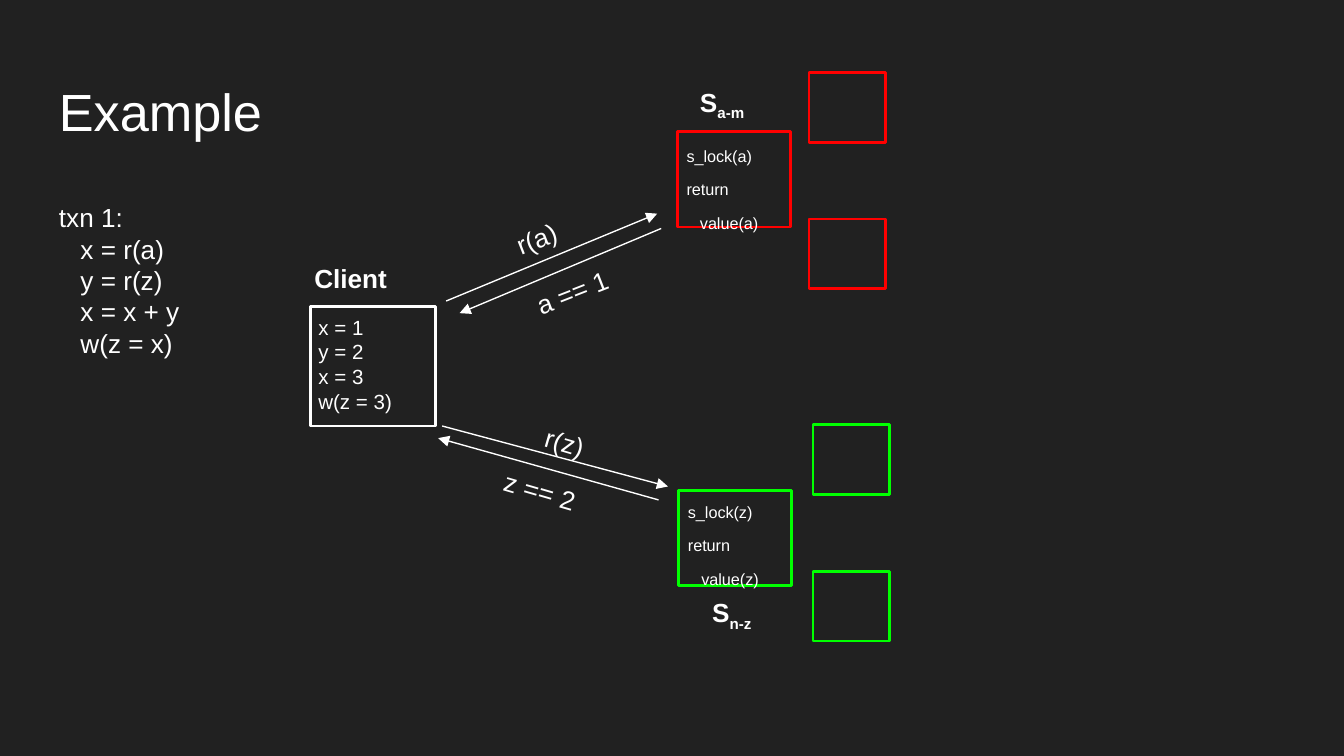
from pptx import Presentation
from pptx.dml.color import RGBColor
from pptx.enum.shapes import MSO_CONNECTOR, MSO_SHAPE
from pptx.oxml.ns import qn
from pptx.util import Inches, Pt
from lxml import etree

RECTANGLE = MSO_SHAPE.RECTANGLE
STRAIGHT = MSO_CONNECTOR.STRAIGHT
BACKGROUND, WHITE, RED, GREEN = "212121", "FFFFFF", "FF0000", "00FF00"


def color(value):
    return RGBColor.from_string(value)


class SlideBuilder:
    font = "Arial"
    margin = 0.1

    def __init__(self, slide):
        self.slide = slide
        slide.background.fill.solid()
        slide.background.fill.fore_color.rgb = color(BACKGROUND)

    def run(self, paragraph, text, size, bold, baseline):
        run = paragraph.add_run()
        run.text = text
        run.font.name = self.font
        run.font.size = Pt(size)
        run.font.bold = bold
        run.font.color.rgb = color(WHITE)
        if baseline:
            run.font._element.set("baseline", str(baseline * 1000))

    def text(self, text, left, top, width, height, size=14, bold=False,
             rotation=0, baseline=0, subscript="", indents=()):
        """Newlines split paragraphs, vertical tabs break lines within one."""
        box = self.slide.shapes.add_textbox(
            Inches(left), Inches(top), Inches(width), Inches(height))
        box.rotation = rotation
        frame = box.text_frame
        frame.word_wrap = True
        frame.margin_left = frame.margin_right = Inches(self.margin)
        frame.margin_top = frame.margin_bottom = Inches(self.margin)
        for index, content in enumerate(text.split("\n")):
            paragraph = frame.add_paragraph() if index else frame.paragraphs[0]
            if indents:
                properties = paragraph._p.get_or_add_pPr()
                properties.set("marL", str(Inches(indents[index])))
                properties.set("indent", "0")
            for line_index, line in enumerate(content.split("\v")):
                if line_index:
                    paragraph.add_line_break()
                self.run(paragraph, line, size, bold, baseline)
        if subscript:
            self.run(paragraph, subscript, size, bold, -25)

    def outline(self, left, top, width, height, line_color):
        shape = self.slide.shapes.add_shape(
            RECTANGLE, Inches(left), Inches(top), Inches(width), Inches(height))
        shape.shadow.inherit = False
        shape.fill.background()
        shape.line.color.rgb = color(line_color)
        shape.line.width = Pt(1.5)

    def arrow(self, start, end):
        connector = self.slide.shapes.add_connector(
            STRAIGHT, *(Inches(value) for value in start + end))
        connector.line.color.rgb = color(WHITE)
        connector.line.width = Pt(0.75)
        line = connector.line._get_or_add_ln()
        etree.SubElement(line, qn("a:tailEnd"), type="triangle")
        etree.SubElement(connector._element.spPr, qn("a:effectLst"))


def main():
    presentation = Presentation()
    presentation.slide_width = Inches(10)
    presentation.slide_height = Inches(10 * 9 / 16)
    builder = SlideBuilder(
        presentation.slides.add_slide(presentation.slide_layouts[6]))

    # Title and transaction
    builder.text("Example", 0.34, 0.49, 2.54, 0.63, size=28)
    builder.text("txn 1:\nx = r(a)\ny = r(z)\nx = x + y\nw(z = x)",
                 0.34, 1.4, 1.22, 1.69, indents=(0, 0.16, 0.16, 0.16, 0.16))

    # Client
    builder.outline(2.31, 2.28, 0.93, 0.89, WHITE)
    builder.text("Client", 2.24, 1.85, 0.93, 0.34, bold=True)
    builder.text("x = 1\vy = 2\nx = 3\nw(z = 3)", 2.27, 2.24, 1.08, 0.81, size=11)

    # Servers: key, line colour, box corner, text top and height,
    # replica left and tops
    servers = [
        ("a", RED, 5.04, 0.98, 0.96, 0.81, 6.02, (0.54, 1.63)),
        ("z", GREEN, 5.05, 3.65, 3.61, 0.89, 6.05, (3.16, 4.25)),
    ]
    for (key, line_color, left, top, text_top, text_height,
         replica_left, replica_tops) in servers:
        builder.outline(left, top, 0.84, 0.71, line_color)
        for replica_top in replica_tops:
            builder.outline(replica_left, replica_top, 0.57, 0.52, line_color)
        builder.text(f"s_lock({key})\nreturn\nvalue({key})",
                     left - 0.03, text_top, 1.08, text_height,
                     size=15, baseline=30, indents=(0, 0, 0.1))

    # Server names
    for key_range, left, top in [("a-m", 5.11, 0.54), ("n-z", 5.2, 4.34)]:
        builder.text("S", left, top, 0.72, 0.34, bold=True, subscript=key_range)

    # Messages: label, left, top, width, rotation, arrow start and end
    messages = [
        ("r(a)", 3.71, 1.55, 0.57, 338.7, (3.32, 2.24), (4.89, 1.59)),
        ("a == 1", 3.85, 1.95, 0.81, 338.7, (4.92, 1.7), (3.42, 2.33)),
        ("r(z)", 3.98, 3.09, 0.57, 16.3, (3.29, 3.17), (4.97, 3.62)),
        ("z == 2", 3.67, 3.45, 0.81, 16.2, (4.9, 3.72), (3.26, 3.26)),
    ]
    for label, left, top, width, rotation, start, end in messages:
        builder.arrow(start, end)
        builder.text(label, left, top, width, 0.27, rotation=rotation)

    presentation.save("out.pptx")


if __name__ == "__main__":
    main()
